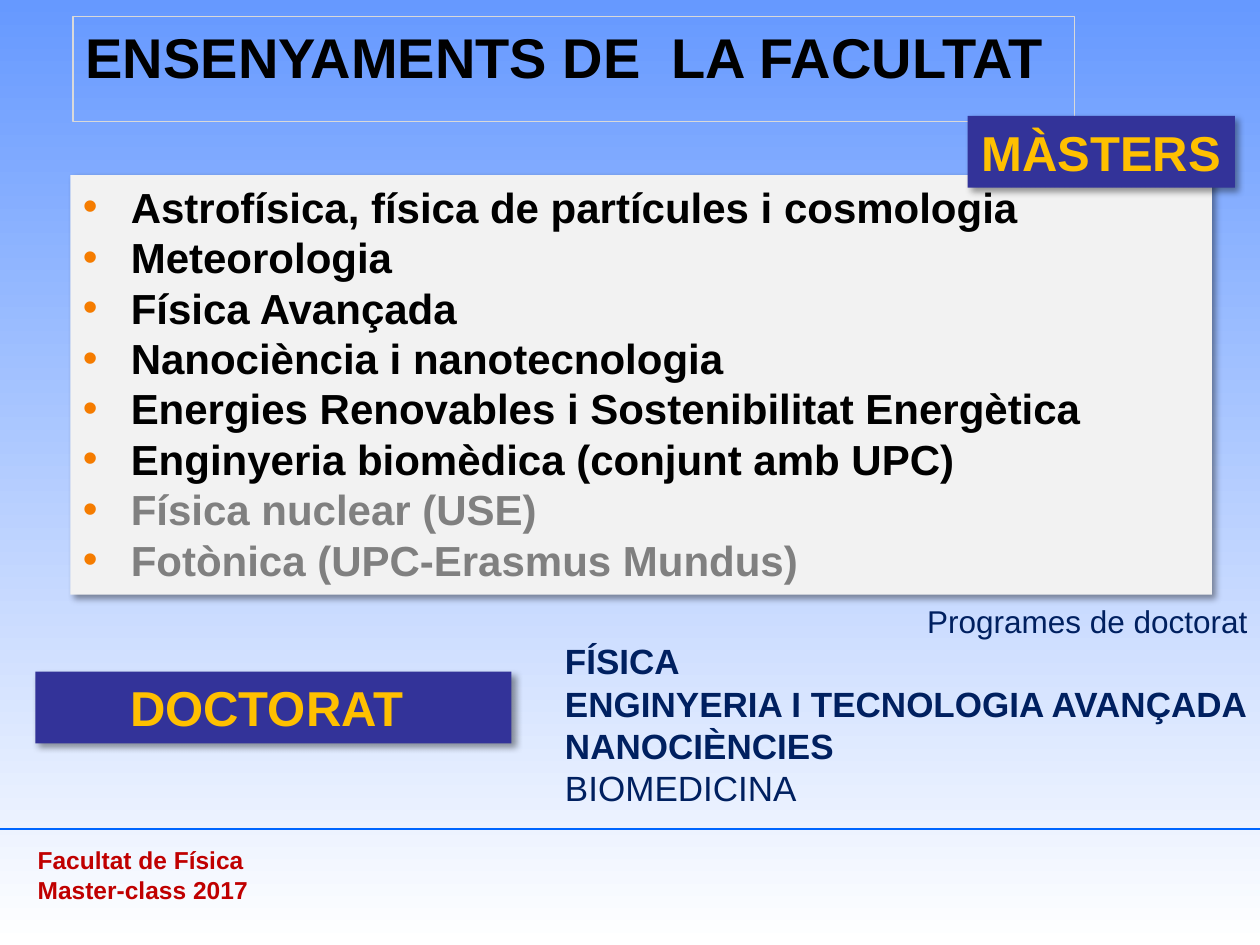
"""Builds a slide on the master's and doctoral studies of a physics faculty."""
from lxml.etree import SubElement
from pptx import Presentation
from pptx.dml.color import RGBColor as RGB
from pptx.enum.shapes import MSO_CONNECTOR as CONN, MSO_SHAPE as SHAPE
from pptx.enum.text import MSO_ANCHOR as ANCHOR, MSO_AUTO_SIZE as FIT, PP_ALIGN as AL
from pptx.oxml.ns import qn
from pptx.util import Inches, Pt

COLORS = {
    "sky": "6699FF", "white": "FFFFFF", "rule": "0066FF", "panel": "F2F2F2",
    "label": "333399", "gold": "FFC000", "black": "000000", "gray": "808080",
    "navy": "002060", "red": "C00000", "border": "D9D9D9", "bullet": "F57C00",
}
MASTERS = [
    "Astrofísica, física de partícules i cosmologia",
    "Meteorologia",
    "Física Avançada",
    "Nanociència i nanotecnologia",
    "Energies Renovables i Sostenibilitat Energètica",
    "Enginyeria biomèdica (conjunt amb UPC)",
]
EXTERNAL_MASTERS = ["Física nuclear (USE)", "Fotònica (UPC-Erasmus Mundus)"]
DOCTORATES = ["FÍSICA", "ENGINYERIA I TECNOLOGIA AVANÇADA", "NANOCIÈNCIES"]


def rgb(name):
    return RGB.from_string(COLORS[name])


def style(size, color, bold=True, align=AL.LEFT, bullet=False):
    return {"font": {"size": Pt(size), "bold": bold, "name": "Arial"},
            "color": color, "align": align, "bullet": bullet}


class SlideBuilder:
    """Holds the presentation style and the current slide."""

    def __init__(self, prs):
        self.slide = prs.slides.add_slide(prs.slide_layouts[5])

    def background(self, *names):
        fill = self.slide.background.fill
        fill.gradient()
        fill.gradient_angle = 270
        for position, (stop, name) in enumerate(zip(fill.gradient_stops, names)):
            stop.position = position
            stop.color.rgb = rgb(name)

    def bullet(self, p):
        pPr = p._p.get_or_add_pPr()
        indent = Inches(0.38)
        pPr.set("marL", str(indent))
        pPr.set("indent", str(-indent))
        clr = SubElement(pPr, qn("a:buClr"))
        SubElement(clr, qn("a:srgbClr"), val=COLORS["bullet"])
        SubElement(pPr, qn("a:buFont"), typeface="Arial")
        SubElement(pPr, qn("a:buChar"), char="•")

    def fill_text(self, sp, lines, wrap=True):
        tf = sp.text_frame
        frame = {"word_wrap": wrap, "auto_size": FIT.SHAPE_TO_FIT_TEXT,
                 "vertical_anchor": ANCHOR.TOP}
        for key, value in frame.items():
            setattr(tf, key, value)
        for i, (text, fmt) in enumerate(lines):
            p = tf.add_paragraph() if i else tf.paragraphs[0]
            p.alignment = fmt["align"]
            if fmt["bullet"]:
                self.bullet(p)
            r = p.add_run()
            r.text = text
            for key, value in fmt["font"].items():
                setattr(r.font, key, value)
            r.font.color.rgb = rgb(fmt["color"])

    def title(self, box, text, fmt):
        sp = self.slide.shapes.title
        for key, value in zip(("left", "top", "width", "height"), box):
            setattr(sp, key, Inches(value))
        sp.line.color.rgb = rgb("border")
        sp.line.width = Pt(0.75)
        self.fill_text(sp, [(text, fmt)])

    def text(self, box, lines):
        sp = self.slide.shapes.add_textbox(*map(Inches, box))
        self.fill_text(sp, lines, wrap=False)

    def panel(self, box, fill, lines, wrap=True):
        sp = self.slide.shapes.add_shape(SHAPE.RECTANGLE, *map(Inches, box))
        sp.fill.solid()
        sp.fill.fore_color.rgb = rgb(fill)
        sp.line.fill.background()
        sp.shadow.inherit = False
        effects = sp._element.spPr.find(qn("a:effectLst"))
        shadow = SubElement(effects, qn("a:outerShdw"), blurRad=str(Pt(4)),
                            dist=str(Pt(3)), dir="2700000", algn="tl", rotWithShape="0")
        clr = SubElement(shadow, qn("a:srgbClr"), val=COLORS["black"])
        SubElement(clr, qn("a:alpha"), val="40000")
        self.fill_text(sp, lines, wrap)

    def rule(self, y):
        cx = self.slide.shapes.add_connector(
            CONN.STRAIGHT, Inches(0), Inches(y), Inches(10), Inches(y))
        cx.line.color.rgb = rgb("rule")
        cx.line.width = Pt(1.5)
        SubElement(cx._element.spPr, qn("a:effectLst"))


def main():
    prs = Presentation()
    prs.slide_width, prs.slide_height = Inches(10), Inches(7.5)
    s = SlideBuilder(prs)
    s.background("sky", "white")
    s.rule(6.58)

    footer = style(14, "red")
    s.text((0.2, 6.66, 1.88, 0.57),
           [("Facultat de Física", footer), ("Master-class 2017", footer)])

    own = style(24, "black", bullet=True)
    external = style(24, "gray", bullet=True)
    s.panel((0.56, 1.39, 9.06, 3.33), "panel",
            [(name, own) for name in MASTERS]
            + [(name, external) for name in EXTERNAL_MASTERS])

    label = style(28, "gold", align=AL.CENTER)
    s.panel((0.28, 5.33, 3.78, 0.57), "label", [("DOCTORAT ", label)])
    s.title((0.58, 0.13, 7.95, 0.64), "ENSENYAMENTS DE  LA FACULTAT", style(32, "black"))
    s.panel((7.68, 0.92, 2.12, 0.57), "label", [("MÀSTERS", label)], wrap=False)

    program = style(20, "navy")
    s.text((4.22, 4.73, 5.78, 1.75),
           [("Programes de doctorat", style(18, "navy", bold=False, align=AL.RIGHT))]
           + [(name, program) for name in DOCTORATES]
           + [("BIOMEDICINA", style(20, "navy", bold=False))])
    prs.save("out.pptx")


if __name__ == "__main__":
    main()
